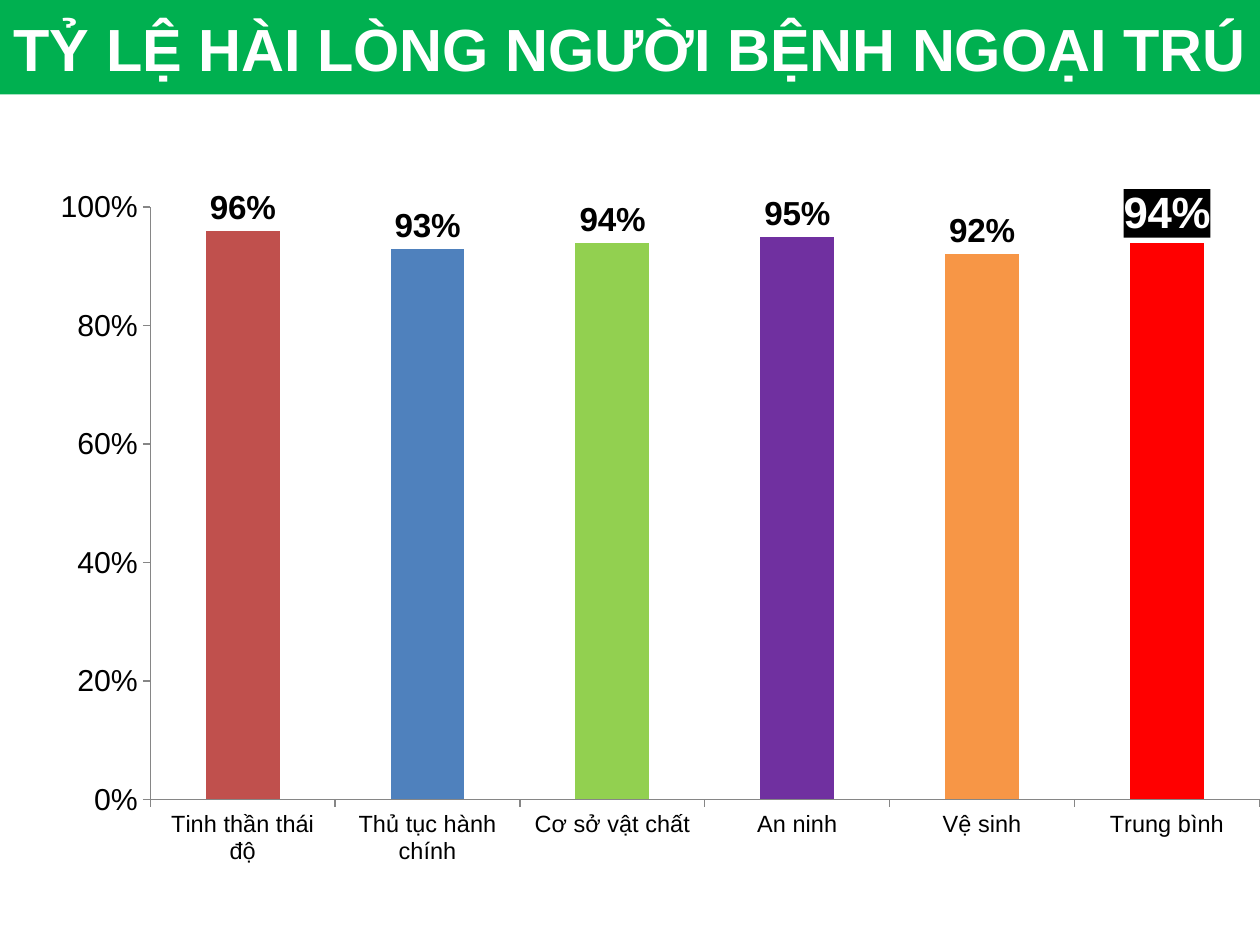
import pptx
import pptx.chart.data
import pptx.dml.color
import pptx.enum.chart
import pptx.enum.shapes
import pptx.enum.text
import pptx.oxml
import pptx.oxml.ns
import pptx.util

Pt = pptx.util.Pt
RGBColor = pptx.dml.color.RGBColor

GREEN = RGBColor(0x00, 0xB0, 0x50)
WHITE = RGBColor(0xFF, 0xFF, 0xFF)
BLACK = RGBColor(0x00, 0x00, 0x00)
GRAY = RGBColor(0x86, 0x86, 0x86)
BRICK = RGBColor(0xC0, 0x50, 0x4D)
BLUE = RGBColor(0x4F, 0x81, 0xBD)
LIME = RGBColor(0x92, 0xD0, 0x50)
PURPLE = RGBColor(0x70, 0x30, 0xA0)
ORANGE = RGBColor(0xF7, 0x96, 0x46)
RED = RGBColor(0xFF, 0x00, 0x00)

RATINGS = [
    ("Tinh thần thái độ", 0.96, BRICK),
    ("Thủ tục hành chính", 0.93, BLUE),
    ("Cơ sở vật chất", 0.94, LIME),
    ("An ninh", 0.95, PURPLE),
    ("Vệ sinh", 0.92, ORANGE),
    ("Trung bình", 0.94, RED),
]


def set_font(font, size, color=BLACK, bold=False):
    font.name = "Arial"
    font.size = Pt(size)
    font.bold = bold
    font.color.rgb = color


prs = pptx.Presentation()
prs.slide_width, prs.slide_height = Pt(720), Pt(540)
s = prs.slides.add_slide(prs.slide_layouts[6])

# Title band
sp = s.shapes.add_shape(pptx.enum.shapes.MSO_SHAPE.RECTANGLE, 0, 0, Pt(720), Pt(54))
sp.shadow.inherit = False
sp.fill.solid()
sp.fill.fore_color.rgb = GREEN
sp.line.fill.background()
tf = sp.text_frame
tf.word_wrap = False
tf.vertical_anchor = pptx.enum.text.MSO_ANCHOR.MIDDLE
tf.text = "TỶ LỆ HÀI LÒNG NGƯỜI BỆNH NGOẠI TRÚ"
p = tf.paragraphs[0]
p.alignment = pptx.enum.text.PP_ALIGN.CENTER
set_font(p.runs[0].font, 34, WHITE, bold=True)

# Satisfaction chart
data = pptx.chart.data.CategoryChartData(number_format="0%")
data.categories = [name for name, _, _ in RATINGS]
data.add_series("Series 1", [value for _, value, _ in RATINGS])
chart = s.shapes.add_chart(
    pptx.enum.chart.XL_CHART_TYPE.COLUMN_CLUSTERED,
    Pt(4.3), Pt(88.6), Pt(715.7), Pt(424.8), data,
).chart
chart.has_title = False
chart.has_legend = False
chart.font.name = "Calibri"
chart.font.size = Pt(17.3)
chart.font.color.rgb = BLACK

for axis, size in ((chart.category_axis, 13.4), (chart.value_axis, 17.3)):
    axis.has_major_gridlines = False
    axis.major_tick_mark = pptx.enum.chart.XL_TICK_MARK.OUTSIDE
    axis.minor_tick_mark = pptx.enum.chart.XL_TICK_MARK.NONE
    axis.format.line.color.rgb = GRAY
    axis.format.line.width = Pt(0.75)
    set_font(axis.tick_labels.font, size)
axis = chart.value_axis
axis.minimum_scale, axis.maximum_scale, axis.major_unit = 0, 1, 0.2
axis.tick_labels.number_format = "0%"
axis.tick_labels.number_format_is_linked = False

plot = chart.plots[0]
plot.gap_width = 150
plot.vary_by_categories = False
series = plot.series[0]
series.format.fill.solid()
series.format.fill.fore_color.rgb = BLUE
for i, (_, _, color) in enumerate(RATINGS):
    fill = series.points[i].format.fill
    fill.solid()
    fill.fore_color.rgb = color

labels = series.data_labels
labels.show_value = True
labels.number_format = "0%"
labels.number_format_is_linked = False
labels.position = pptx.enum.chart.XL_LABEL_POSITION.OUTSIDE_END
set_font(labels.font, 19, bold=True)

# The average stands out: a larger white label on black
label = series.points[len(RATINGS) - 1].data_label
set_font(label.font, 25, WHITE, bold=True)
label.position = pptx.enum.chart.XL_LABEL_POSITION.OUTSIDE_END
nsdecls = pptx.oxml.ns.nsdecls
label_text = series._element.xpath("c:dLbls/c:dLbl/c:txPr")[0]
label_text.addprevious(pptx.oxml.parse_xml(
    f'<c:spPr {nsdecls("c", "a")}><a:solidFill><a:srgbClr val="{BLACK}"/>'
    "</a:solidFill></c:spPr>"
))

# Fixed inner plot area, as fractions of the chart
plot_area = chart._chartSpace.xpath("c:chart/c:plotArea")[0]
for layout in plot_area.xpath("c:layout"):
    plot_area.remove(layout)
bounds = "".join(
    f'<c:{tag} val="{value}"/>'
    for tag, value in (
        ("layoutTarget", "inner"), ("xMode", "edge"), ("yMode", "edge"),
        ("x", 0.114), ("y", 0.07), ("w", 0.886), ("h", 0.797),
    )
)
plot_area.insert(0, pptx.oxml.parse_xml(
    f'<c:layout {nsdecls("c")}><c:manualLayout>{bounds}</c:manualLayout></c:layout>'
))

prs.save("out.pptx")
